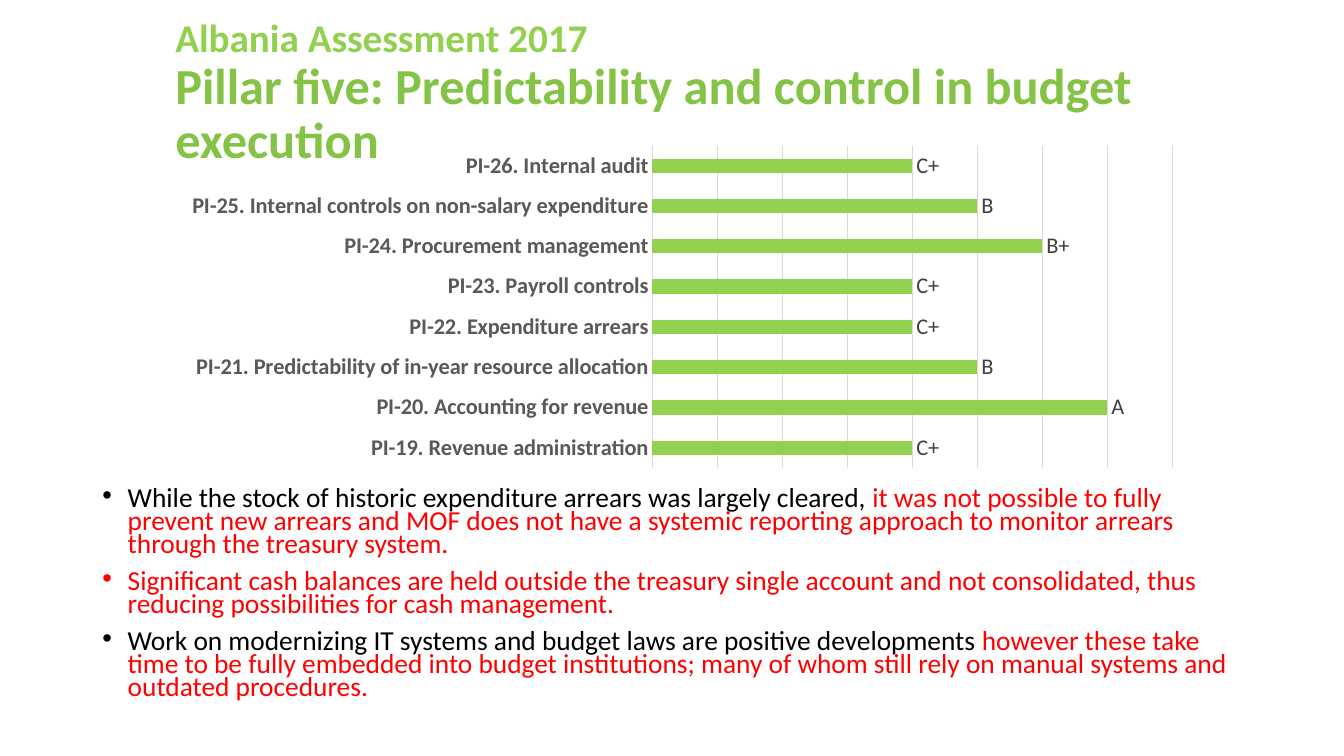
from lxml import etree
from pptx import Presentation
from pptx.chart.data import CategoryChartData
from pptx.dml.color import RGBColor
from pptx.enum.chart import XL_CHART_TYPE as ChartType
from pptx.enum.chart import XL_LABEL_POSITION as LabelPosition
from pptx.enum.chart import XL_TICK_LABEL_POSITION as TickLabels
from pptx.enum.chart import XL_TICK_MARK as TickMark
from pptx.enum.text import MSO_ANCHOR as Anchor
from pptx.oxml.ns import qn
from pptx.util import Cm, Pt

FONT = "Calibri"
LIME, GREEN = "92D050", "84C346"
BLACK, RED = "000000", "FF0000"
GRID, AXIS_TEXT, LABEL_TEXT = "D9D9D9", "595959", "404040"


def color(value):
    return RGBColor.from_string(value)


class AssessmentSlide:
    """Style and element builders for the current slide."""

    def __init__(self, deck):
        self.slide = deck.slides.add_slide(deck.slide_layouts[6])

    def style(self, font, size, fill, bold=False):
        font.name, font.size, font.bold = FONT, Pt(size), bold
        font.color.rgb = color(fill)

    def text_box(self, left, top, width, height, anchor):
        frame = self.slide.shapes.add_textbox(
            Cm(left), Cm(top), Cm(width), Cm(height)).text_frame
        frame.word_wrap = True
        frame.vertical_anchor = anchor
        return frame

    def title(self, box, country, pillar):
        heading = self.text_box(*box, Anchor.MIDDLE).paragraphs[0]
        heading.text = f"{country}\v{pillar}"
        heading.line_spacing = 0.9
        for run, size, fill in zip(heading.runs, (28, 36), (LIME, GREEN)):
            self.style(run.font, size, fill, bold=True)

    def bullets(self, box, findings):
        frame = self.text_box(*box, Anchor.TOP)
        for number, parts in enumerate(findings):
            finding = frame.add_paragraph() if number else frame.paragraphs[0]
            finding.line_spacing = 0.7
            finding.space_before = Pt(10)
            for text, fill in parts:
                run = finding.add_run()
                run.text = text
                self.style(run.font, 19.6, fill)
            # Hanging bullet
            properties = finding._p.get_or_add_pPr()
            properties.set("marL", str(Cm(0.64)))
            properties.set("indent", str(-Cm(0.64)))
            etree.SubElement(properties, qn("a:buFont")).set("typeface", "Arial")
            etree.SubElement(properties, qn("a:buChar")).set("char", "•")

    def bar_chart(self, box, scores):
        data = CategoryChartData()
        data.categories = [indicator for indicator, _, _ in scores]
        data.add_series("Series 1", [score for _, score, _ in scores])
        chart = self.slide.shapes.add_chart(
            ChartType.BAR_CLUSTERED, *map(Cm, box), data).chart
        chart.has_title = chart.has_legend = False
        self.style(chart.font, 10, BLACK)

        # Axes
        indicators, values = chart.category_axis, chart.value_axis
        indicators.major_tick_mark = TickMark.NONE
        indicators.tick_label_position = TickLabels.NEXT_TO_AXIS
        self.style(indicators.tick_labels.font, 16, AXIS_TEXT, bold=True)
        values.visible = False
        values.minimum_scale, values.maximum_scale, values.major_unit = 0, 8, 1
        for line in (indicators.format.line, values.major_gridlines.format.line):
            line.color.rgb = color(GRID)
            line.width = Pt(0.75)

        # Bars and their grades
        plot = chart.plots[0]
        plot.gap_width = 182
        plot.vary_by_categories = False
        bars = plot.series[0]
        bars.format.fill.solid()
        bars.format.fill.fore_color.rgb = color(LIME)
        labels = bars.data_labels
        labels.show_value = True
        labels.position = LabelPosition.OUTSIDE_END
        self.style(labels.font, 16, LABEL_TEXT, bold=True)
        for position, (_, _, grade) in enumerate(scores):
            label = bars.points[position].data_label
            label.text_frame.text = grade
            label.position = LabelPosition.OUTSIDE_END
            self.style(label.text_frame.paragraphs[0].runs[0].font, 16, LABEL_TEXT)


SCORES = [
    ("PI-19. Revenue administration", 4, "C+"),
    ("PI-20. Accounting for revenue", 7, "A"),
    ("PI-21. Predictability of in-year resource allocation", 5, "B"),
    ("PI-22. Expenditure arrears", 4, "C+"),
    ("PI-23. Payroll controls", 4, "C+"),
    ("PI-24. Procurement management", 6, "B+"),
    ("PI-25. Internal controls on non-salary expenditure", 5, "B"),
    ("PI-26. Internal audit", 4, "C+"),
]

FINDINGS = [
    [("While the stock of historic expenditure arrears was largely cleared, ", BLACK),
     ("it was not possible to fully prevent new arrears and MOF does not have a "
      "systemic reporting approach to monitor arrears through the treasury system.", RED)],
    [("Significant cash balances are held outside the treasury single account and "
      "not consolidated, thus reducing possibilities for cash management.", RED)],
    [("Work on modernizing IT systems and budget laws are positive developments ", BLACK),
     ("however these take time to be fully embedded into budget institutions; many "
      "of whom still rely on manual systems and outdated procedures.", RED)],
]


def main():
    deck = Presentation()
    deck.slide_width, deck.slide_height = Cm(33.87), Cm(19.05)
    page = AssessmentSlide(deck)
    page.title((4.17, 0.53, 29.06, 3.68), "Albania Assessment 2017 ",
               "Pillar five: Predictability and control in budget execution")
    page.bullets((2.33, 12.19, 29.21, 5.97), FINDINGS)
    page.bar_chart((4.33, 3.5, 25.73, 8.46), SCORES)
    deck.save("out.pptx")


if __name__ == "__main__":
    main()
